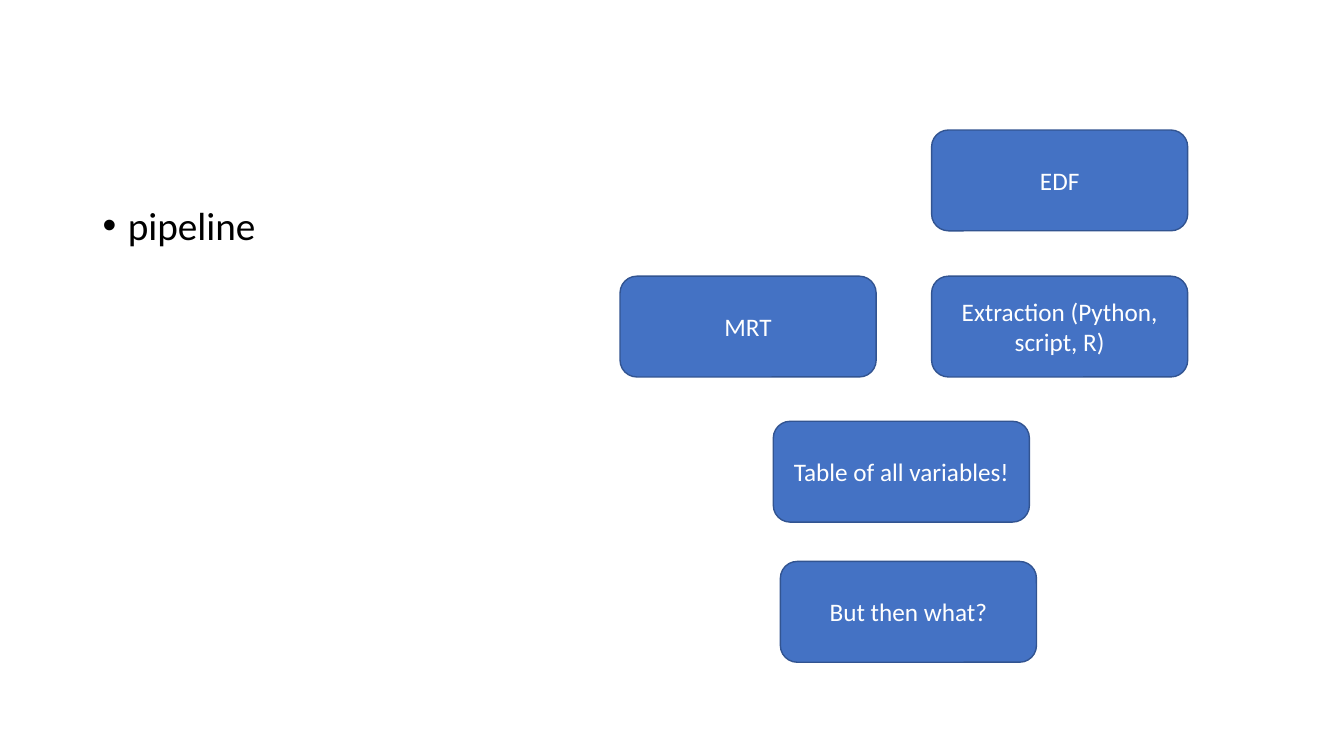
from lxml.etree import SubElement
from pptx import Presentation
from pptx.dml.color import RGBColor
from pptx.enum.shapes import MSO_SHAPE as Shape
from pptx.enum.text import MSO_ANCHOR as Anchor, PP_ALIGN as Align
from pptx.oxml.ns import qn
from pptx.util import Inches, Pt

BULLETS = ["pipeline"]
STEPS = [
    ("Extraction (Python, script, R)", 9.24, 2.74),
    ("EDF", 9.24, 1.29),
    ("MRT", 6.15, 2.74),
    ("Table of all variables!", 7.67, 4.18),
    ("But then what?", 7.74, 5.57),
]
STEP_WIDTH, STEP_HEIGHT = 2.54, 1
COLOURS = {"text": "000000", "fill": "4472C4", "line": "325491", "label": "FFFFFF"}
FONT = "Calibri"


def colour(name):
    return RGBColor.from_string(COLOURS[name])


def add_span(para, text, size, colour_name):
    span = para.add_run()
    span.text = text
    span.font.name = FONT
    span.font.size = Pt(size)
    span.font.color.rgb = colour(colour_name)


def add_bullet(para):
    props = para._p.get_or_add_pPr()
    props.set("marL", str(Inches(0.25)))
    props.set("indent", str(-Inches(0.25)))
    SubElement(props, qn("a:buFont")).set("typeface", "Arial")
    SubElement(props, qn("a:buChar")).set("char", "•")


def add_outline(page):
    box = page.shapes.add_textbox(Inches(0.92), Inches(2), Inches(4.69), Inches(4.76))
    frame = box.text_frame
    frame.word_wrap = True
    for index, text in enumerate(BULLETS):
        para = frame.add_paragraph() if index else frame.paragraphs[0]
        para.line_spacing = 0.9
        para.space_before = Pt(10)
        add_bullet(para)
        add_span(para, text, 28, "text")


def add_step(page, text, left, top):
    box = page.shapes.add_shape(
        Shape.ROUNDED_RECTANGLE,
        Inches(left), Inches(top), Inches(STEP_WIDTH), Inches(STEP_HEIGHT),
    )
    box.shadow.inherit = False
    box.fill.solid()
    box.fill.fore_color.rgb = colour("fill")
    box.line.color.rgb = colour("line")
    box.line.width = Pt(1)
    frame = box.text_frame
    frame.word_wrap = True
    frame.vertical_anchor = Anchor.MIDDLE
    para = frame.paragraphs[0]
    para.alignment = Align.CENTER
    add_span(para, text, 18, "label")


def main():
    deck = Presentation()
    deck.slide_width, deck.slide_height = Inches(13.33), Inches(7.5)
    page = deck.slides.add_slide(deck.slide_layouts[6])
    add_outline(page)
    for step in STEPS:
        add_step(page, *step)
    deck.save("out.pptx")


if __name__ == "__main__":
    main()
